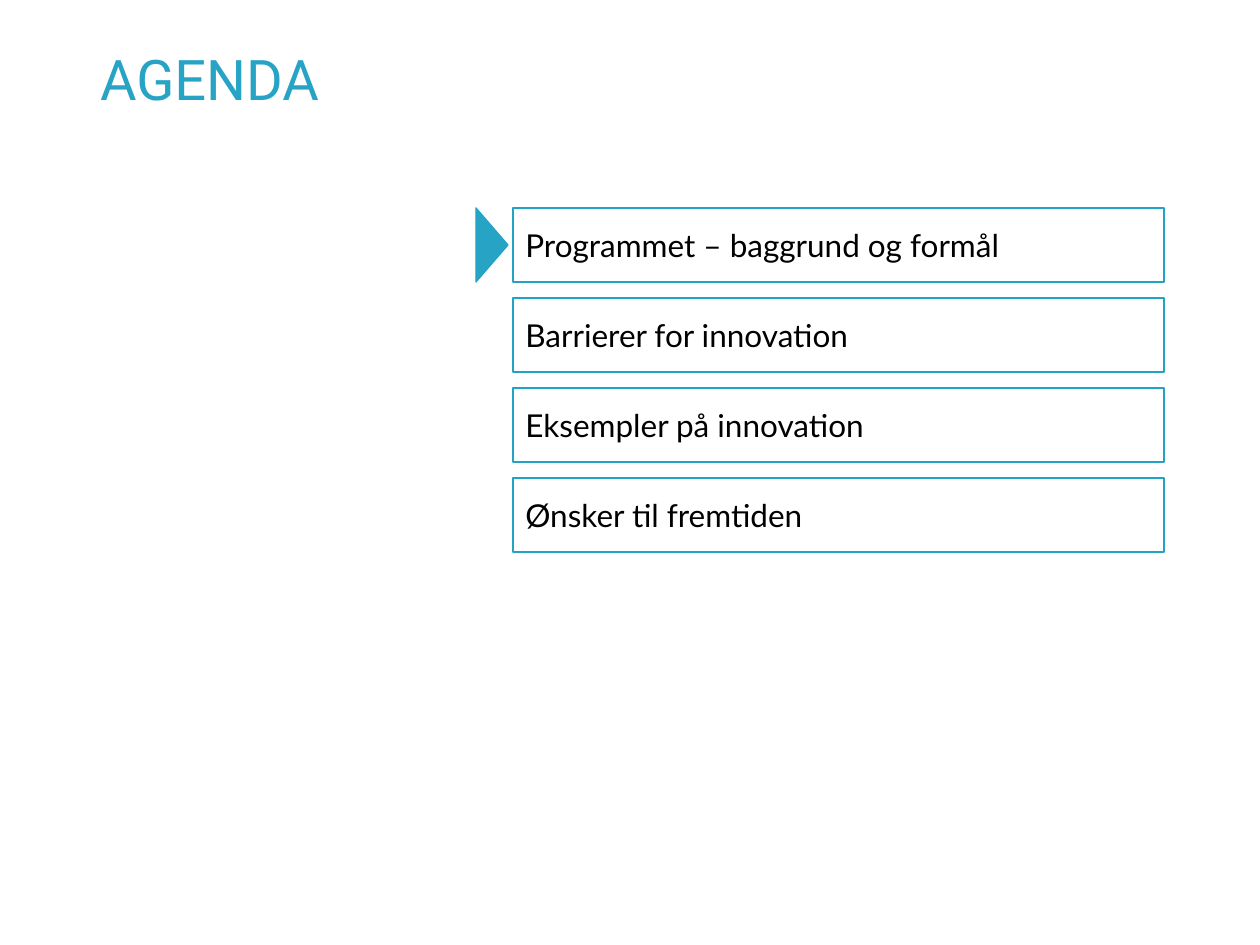
import pptx
import pptx.util
import pptx.dml.color
import pptx.enum.shapes
import pptx.enum.text

EMU_PER_PX = 914400 // 126
ACCENT = "27A4C5"
OUTLINE = "22A3C5"
TOPICS = [
    "Programmet – baggrund og formål",
    "Barrierer for innovation",
    "Eksempler på innovation",
    "Ønsker til fremtiden",
]
TOPIC_LEFT, TOPIC_TOP, TOPIC_WIDTH, TOPIC_HEIGHT = 513, 208, 651, 74
TOPIC_PITCH = 90


def px(*lengths):
    """Turn pixel lengths into EMU."""
    return [pptx.util.Emu(length * EMU_PER_PX) for length in lengths]


def color(hex_code):
    """Turn a hex string into a colour."""
    return pptx.dml.color.RGBColor.from_string(hex_code)


def style_text(paragraph, words, font_name, size, hex_code):
    """Write left-aligned words in the given font."""
    paragraph.text = words
    paragraph.alignment = pptx.enum.text.PP_ALIGN.LEFT
    font = paragraph.runs[0].font
    font.name = font_name
    font.size = pptx.util.Pt(size)
    font.color.rgb = color(hex_code)


def add_outlined(shapes, preset, left, top, width, height):
    """Add an unfilled preset shape with the thin agenda outline."""
    outlined = shapes.add_shape(preset, *px(left, top, width, height))
    outlined.shadow.inherit = False
    outlined.fill.background()
    outlined.line.color.rgb = color(OUTLINE)
    outlined.line.width = pptx.util.Pt(0.75)
    return outlined


def add_topic(shapes, position):
    """Add the box of the agenda topic at the given position."""
    top = TOPIC_TOP + position * TOPIC_PITCH
    topic = add_outlined(shapes, pptx.enum.shapes.MSO_SHAPE.RECTANGLE,
                         TOPIC_LEFT, top, TOPIC_WIDTH, TOPIC_HEIGHT)
    frame = topic.text_frame
    frame.vertical_anchor = pptx.enum.text.MSO_ANCHOR.MIDDLE
    style_text(frame.paragraphs[0], TOPICS[position], "Lato", 18, "000000")


def add_marker(shapes):
    """Add the triangle that points at the current topic."""
    marker = add_outlined(shapes, pptx.enum.shapes.MSO_SHAPE.ISOSCELES_TRIANGLE,
                          455, 229, TOPIC_HEIGHT, 32)
    marker.rotation = 90
    marker.fill.solid()
    marker.fill.fore_color.rgb = color(ACCENT)


def add_title(shapes, words):
    """Add the slide title."""
    title = shapes.add_textbox(*px(100, 54, 868, 169))
    frame = title.text_frame
    frame.word_wrap = True
    frame.margin_left = frame.margin_right = frame.margin_bottom = 0
    frame.margin_top = px(5)[0]
    heading = frame.paragraphs[0]
    style_text(heading, words, "Roboto", 32, ACCENT)
    heading.line_spacing = pptx.util.Pt(30)


def main():
    """Build the agenda slide and save it."""
    deck = pptx.Presentation()
    deck.slide_width, deck.slide_height = px(1260, 945)
    slide = deck.slides.add_slide(deck.slide_layouts[6])
    for position in range(1, len(TOPICS)):
        add_topic(slide.shapes, position)
    add_title(slide.shapes, "AGENDA")
    current_topic = slide.shapes.add_group_shape()
    add_topic(current_topic.shapes, 0)
    add_marker(current_topic.shapes)
    deck.save("out.pptx")


if __name__ == "__main__":
    main()
